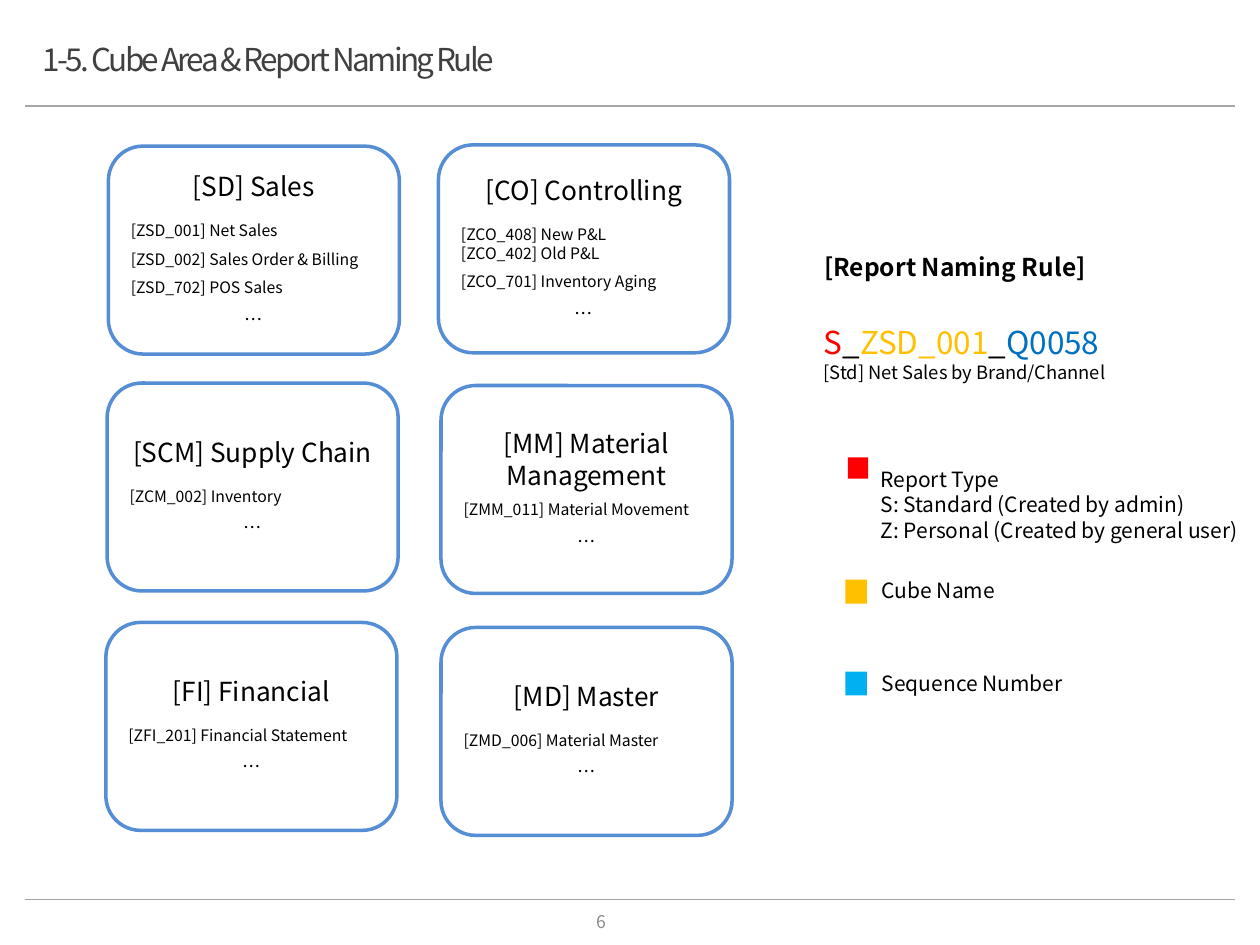
import pptx
import pptx.util
import pptx.dml.color
import pptx.enum.shapes
import pptx.enum.text
import pptx.oxml.ns
import lxml.etree

RGBColor = pptx.dml.color.RGBColor
SHAPE = pptx.enum.shapes.MSO_SHAPE
ALIGN = pptx.enum.text.PP_ALIGN
BLACK = RGBColor(0x00, 0x00, 0x00)
WHITE = RGBColor(0xFF, 0xFF, 0xFF)
TITLE_GREY = RGBColor(0x40, 0x40, 0x40)
PAGE_GREY = RGBColor(0x8C, 0x8C, 0x8C)
RULE_GREY = RGBColor(0xA6, 0xA6, 0xA6)
CARD_BLUE = RGBColor(0x55, 0x8E, 0xD5)
RED = RGBColor(0xFF, 0x00, 0x00)
AMBER = RGBColor(0xFF, 0xC0, 0x00)
CODE_BLUE = RGBColor(0x00, 0x70, 0xC0)
SKY_BLUE = RGBColor(0x00, 0xB0, 0xF0)

COLUMNS, ROWS = 100, 75
CARD_SIZE = (23.1, 16.5)
CARDS = [
    (8.6, 11.6, "[SD] Sales",
     [("[ZSD_001] Net Sales", 2), ("[ZSD_002] Sales Order & Billing", 1.5),
      ("[ZSD_702] POS Sales", 1.5)]),
    (34.8, 11.5, "[CO] Controlling",
     [("[ZCO_408] New P&L", 2), ("[ZCO_402] Old P&L", None),
      ("[ZCO_701] Inventory Aging", 1.5)]),
    (8.5, 30.4, "[SCM] Supply Chain", [("[ZCM_002] Inventory", 2)]),
    (8.4, 49.4, "[FI] Financial", [("[ZFI_201] Financial Statement", 2)]),
    (35, 30.6, "[MM] Material Management", [("[ZMM_011] Material Movement", 1.5)]),
    (35, 49.8, "[MD] Master", [("[ZMD_006] Material Master", 2)]),
]

LEGEND = [
    (RED, (67.3, 36.3, 1.6, 1.7), (68.9, 35.4),
     [("Report Type", 2.5), ("S: Standard (Created by admin)", None),
      ("Z: Personal (Created by general user)", None)]),
    (AMBER, (67.1, 46, 1.7, 1.9), (69, 43.7), [("Cube Name", None)]),
    (SKY_BLUE, (67.1, 53.3, 1.7, 1.9), (69, 51.1), [("Sequence Number", None)]),
]


class SlideBuilder:
    font_name = "Noto Sans CJK KR"

    def __init__(self, deck):
        self.column = deck.slide_width / COLUMNS
        self.row = deck.slide_height / ROWS
        self.slide = deck.slides.add_slide(deck.slide_layouts[5])

    def place(self, left, top, width, height):
        return (round(left * self.column), round(top * self.row),
                round(width * self.column), round(height * self.row))

    def add_paragraphs(self, frame, paragraphs):
        frame.word_wrap = True
        frame.vertical_anchor = pptx.enum.text.MSO_ANCHOR.MIDDLE
        for index, (runs, align, spacing) in enumerate(paragraphs):
            paragraph = frame.paragraphs[0] if index == 0 else frame.add_paragraph()
            paragraph.alignment = align
            if spacing:
                paragraph.line_spacing = float(spacing)
            for words, size, color in runs:
                run = paragraph.add_run()
                run.text = words
                run.font.size = pptx.util.Pt(size)
                run.font.name = self.font_name
                run.font.color.rgb = color
                east_asian = lxml.etree.SubElement(
                    run.font._element, pptx.oxml.ns.qn("a:ea"))
                east_asian.set("typeface", self.font_name)

    def title(self, grid_box, words):
        heading = self.slide.shapes.title
        heading.left, heading.top, heading.width, heading.height = self.place(*grid_box)
        self.add_paragraphs(heading.text_frame,
                            [([(words, 18, TITLE_GREY)], ALIGN.LEFT, None)])
        heading.text_frame.paragraphs[0].runs[0].font._element.set("spc", "-150")

    def text(self, grid_box, paragraphs):
        label = self.slide.shapes.add_textbox(*self.place(*grid_box))
        self.add_paragraphs(label.text_frame, paragraphs)

    def shape(self, preset, grid_box, fill=None, line=None, paragraphs=()):
        block = self.slide.shapes.add_shape(preset, *self.place(*grid_box))
        block.shadow.inherit = False
        if fill is None:
            block.fill.background()
        else:
            block.fill.solid()
            block.fill.fore_color.rgb = fill
        if line is None:
            block.line.fill.background()
        else:
            block.line.color.rgb = line
            block.line.width = pptx.util.Pt(2)
        self.add_paragraphs(block.text_frame, paragraphs)
        return block

    def rule(self, row):
        left, top, width, _ = self.place(2, row, 96, 0)
        divider = self.slide.shapes.add_connector(
            pptx.enum.shapes.MSO_CONNECTOR.STRAIGHT, left, top, left + width, top)
        divider.line.color.rgb = RULE_GREY
        divider.line.width = pptx.util.Pt(1)
        lxml.etree.SubElement(divider._element.spPr, pptx.oxml.ns.qn("a:effectLst"))

    def card(self, column, row, area, cubes):
        paragraphs = [([(area, 15, BLACK)], ALIGN.CENTER, None)]
        paragraphs += [([(cube, 9, BLACK)], ALIGN.LEFT, spacing) for cube, spacing in cubes]
        paragraphs.append(([("…", 10.5, BLACK)], ALIGN.CENTER, 1.5))
        self.shape(SHAPE.ROUNDED_RECTANGLE, (column, row, *CARD_SIZE),
                   WHITE, CARD_BLUE, paragraphs)

    def legend_entry(self, color, swatch_box, label_corner, lines):
        self.shape(SHAPE.RECTANGLE, swatch_box, color)
        self.text((*label_corner, 32.2, 6.3),
                  [([(words, 12, BLACK)], ALIGN.LEFT, spacing) for words, spacing in lines])


def main():
    deck = pptx.Presentation()
    deck.slide_width = pptx.util.Inches(10)
    deck.slide_height = pptx.util.Inches(7.5)
    page = SlideBuilder(deck)

    page.title((2.4, 2.9, 80.1, 3.6), "1-5. Cube Area & Report Naming Rule")
    page.rule(8.4)
    page.rule(71.4)
    page.text((44.6, 72.1, 6.3, 2.1), [([("6", 10, PAGE_GREY)], ALIGN.CENTER, None)])

    for card in CARDS:
        page.card(*card)

    code_parts = [("S", RED), ("_", BLACK), ("ZSD_001", AMBER),
                  ("_", BLACK), ("Q0058", CODE_BLUE)]
    example = page.shape(
        SHAPE.ROUNDED_RECTANGLE, (64, 24.2, 27.3, 8.3), paragraphs=[
            ([(part, 18, color) for part, color in code_parts], ALIGN.LEFT, 2),
            ([("[Std] Net Sales by Brand/Channel", 10.5, BLACK)], ALIGN.LEFT, None)])
    example.text_frame.margin_bottom = pptx.util.Inches(0.41)

    naming_rule = page.shape(
        SHAPE.ROUNDED_RECTANGLE, (58.1, 17, 35.4, 8.3), paragraphs=[
            ([("[Report Naming Rule]", 14, BLACK)], ALIGN.CENTER, None)])
    naming_rule.text_frame.paragraphs[0].runs[0].font.bold = True

    for entry in LEGEND:
        page.legend_entry(*entry)

    deck.save("out.pptx")


if __name__ == "__main__":
    main()
